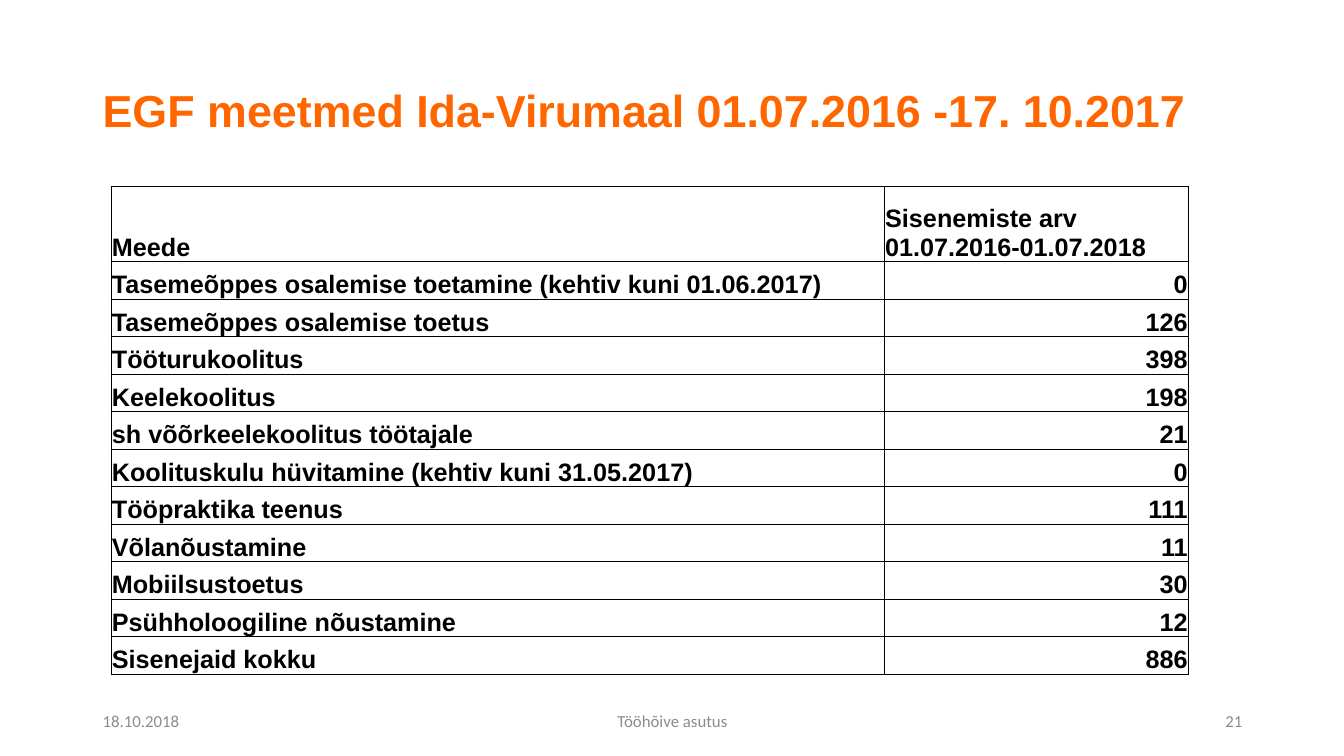
"""Build the slide listing EGF measures and their entry counts."""
from lxml import etree
from pptx import Presentation
from pptx.dml.color import RGBColor
from pptx.enum.text import MSO_ANCHOR, PP_ALIGN
from pptx.oxml.ns import qn
from pptx.util import Inches, Pt

LEFT, MID, RIGHT = PP_ALIGN.LEFT, PP_ALIGN.CENTER, PP_ALIGN.RIGHT
CENTER, BOTTOM = MSO_ANCHOR.MIDDLE, MSO_ANCHOR.BOTTOM
ORANGE = RGBColor(0xFF, 0x66, 0x00)
GREY = RGBColor(0x8C, 0x8C, 0x8C)
BLACK = RGBColor(0, 0, 0)

TITLE = "EGF meetmed Ida-Virumaal 01.07.2016 -17. 10.2017"
FOOTER = [
    ("18.10.2018", 0.92, 3, LEFT),
    ("Tööhõive asutus", 4.42, 4.5, MID),
    ("21", 9.42, 3, RIGHT),
]
ROWS = [
    ("Meede", "Sisenemiste arv 01.07.2016-01.07.2018"),
    ("Tasemeõppes osalemise toetamine (kehtiv kuni 01.06.2017)", "0"),
    ("Tasemeõppes osalemise toetus", "126"),
    ("Tööturukoolitus", "398"),
    ("Keelekoolitus", "198"),
    ("sh võõrkeelekoolitus töötajale", "21"),
    ("Koolituskulu hüvitamine (kehtiv kuni 31.05.2017)", "0"),
    ("Tööpraktika teenus", "111"),
    ("Võlanõustamine", "11"),
    ("Mobiilsustoetus", "30"),
    ("Psühholoogiline nõustamine", "12"),
    ("Sisenejaid kokku", "886"),
]
COLS = (7.67, 3.02)
HEIGHT = 4.84


def write(frame, text, size, font, color, bold=False, align=LEFT):
    """Fill the first paragraph with one styled run."""
    para = frame.paragraphs[0]
    para.alignment = align
    run = para.add_run()
    run.text = text
    run.font.size = Pt(size)
    run.font.name = font
    run.font.bold = bold
    run.font.color.rgb = color
    return para


def add_box(slide, x, y, w, h):
    """Add a wrapped, vertically centred text box."""
    frame = slide.shapes.add_textbox(*map(Inches, (x, y, w, h))).text_frame
    frame.word_wrap = True
    frame.vertical_anchor = CENTER
    return frame


def add_edges(cell):
    """Draw thin black borders on all sides of a cell."""
    props = cell._tc.get_or_add_tcPr()
    for spot, side in enumerate(("a:lnL", "a:lnR", "a:lnT", "a:lnB")):
        line = etree.Element(qn(side), w=str(Pt(0.5)))
        fill = etree.SubElement(line, qn("a:solidFill"))
        etree.SubElement(fill, qn("a:srgbClr"), val=str(BLACK))
        props.insert(spot, line)


def add_grid(slide):
    """Add the table of measures."""
    area = map(Inches, (1.1, 1.85, sum(COLS), HEIGHT))
    table = slide.shapes.add_table(len(ROWS), len(COLS), *area).table
    table.horz_banding = False
    unit = HEIGHT / (len(ROWS) + 1)
    for col, width in zip(table.columns, COLS):
        col.width = Inches(width)
    for r, row in enumerate(ROWS):
        table.rows[r].height = Inches(unit if r else 2 * unit)
        for c, text in enumerate(row):
            cell = table.cell(r, c)
            cell.fill.background()
            cell.vertical_anchor = BOTTOM
            cell.margin_left = cell.margin_right = cell.margin_top = Inches(0.01)
            cell.margin_bottom = 0
            align = RIGHT if r and c else LEFT
            write(cell.text_frame, text, 18, "Arial", BLACK, True, align)
            add_edges(cell)


def main():
    """Build and save the deck."""
    deck = Presentation()
    deck.slide_width, deck.slide_height = Inches(13.33), Inches(7.5)
    slide = deck.slides.add_slide(deck.slide_layouts[6])
    head = add_box(slide, 0.92, 0.4, 11.5, 1.45)
    write(head, TITLE, 32, "Arial", ORANGE, True).line_spacing = 0.9
    for text, x, width, align in FOOTER:
        frame = add_box(slide, x, 6.95, width, 0.4)
        write(frame, text, 12, "Calibri", GREY, align=align)
    add_grid(slide)
    deck.save("out.pptx")


if __name__ == "__main__":
    main()
